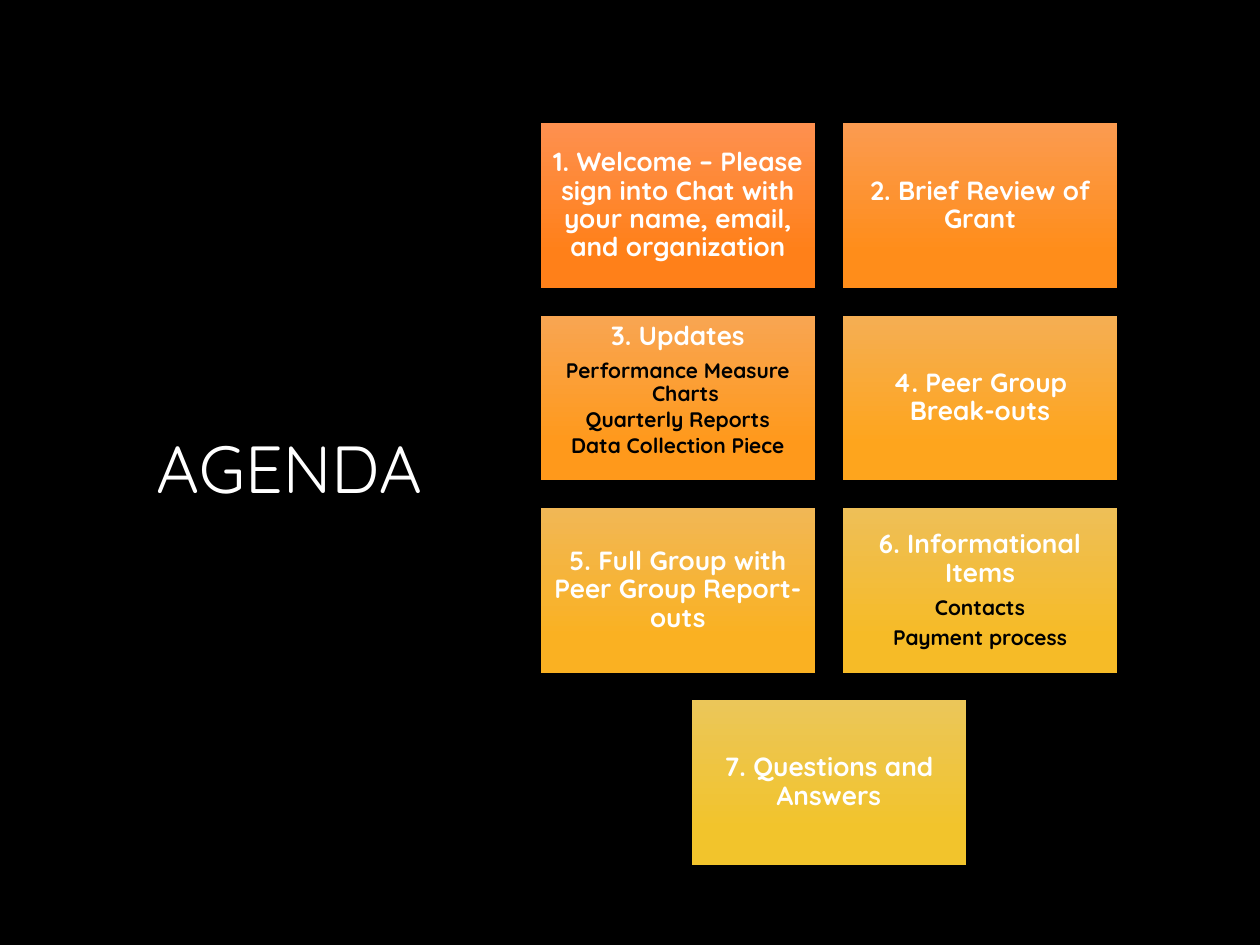
"""Build the agenda slide: a title beside a grid of numbered cards."""
from dataclasses import dataclass

from pptx import Presentation
from pptx import util as u
from pptx.dml.color import RGBColor
from pptx.enum import shapes, text


@dataclass(frozen=True)
class Theme:
    """Colours, font and type sizes."""
    font: str = "Quicksand"
    back: str = "000000"
    light: str = "FFFFFF"
    dark: str = "000000"
    title: int = 38
    head: int = 15
    sub: int = 12


CARDS = [
    ("1. Welcome – Please sign into Chat with your name, email, and organization",
     (), "FE904F", "FF8019"),
    ("2. Brief Review of Grant", (), "FB9B50", "FF8D1A"),
    ("3. Updates",
     ("Performance Measure Charts", "Quarterly Reports", "Data Collection Piece"),
     "F8A552", "FF991B"),
    ("4. Peer Group Break-outs", (), "F5AE53", "FEA51D"),
    ("5. Full Group with Peer Group Report-outs", (), "F1B755", "FAB122"),
    ("6. Informational Items", ("Contacts", "Payment process"), "EEBF57", "F6BB27"),
    ("7. Questions and Answers", (), "EBC659", "F2C42C"),
]
LISTED = 2
COLS = 2
LEFT, TOP, WIDTH = 4.29, 0.98, 2.18
HEIGHT, GAP = 0.6 * WIDTH, 0.1 * WIDTH


def write(para, words, *, font, size, color, bold=False,
          align=text.PP_ALIGN.CENTER, after=0, hang=0):
    """Fill a paragraph with formatted text."""
    if hang:
        props = para._p.get_or_add_pPr()
        props.set("marL", str(u.Inches(hang)))
        props.set("indent", str(-u.Inches(hang)))
    para.alignment = align
    para.line_spacing = 0.9
    para.space_before = u.Pt(0)
    para.space_after = u.Pt(after)
    run = para.add_run()
    run.text = words
    run.font.name = font
    run.font.size = u.Pt(size)
    run.font.bold = bold
    run.font.color.rgb = RGBColor.from_string(color)


class Page:
    """Hold the theme and the current slide."""

    def __init__(self, slide, theme):
        self.slide, self.theme = slide, theme
        fill = slide.background.fill
        fill.solid()
        fill.fore_color.rgb = RGBColor.from_string(theme.back)

    def title(self, words, left, top, width, height):
        """Place the title text."""
        box, look = self.slide.shapes.title, self.theme
        box.left, box.top = u.Inches(left), u.Inches(top)
        box.width, box.height = u.Inches(width), u.Inches(height)
        frame = box.text_frame
        frame.word_wrap = True
        frame.vertical_anchor = text.MSO_ANCHOR.MIDDLE
        write(frame.paragraphs[0], words, font=look.font, size=look.title,
              color=look.light, align=text.PP_ALIGN.RIGHT)

    def card(self, head, subs, first, last, left, top, listed=False):
        """Draw a gradient card with a heading and optional lines."""
        look = self.theme
        box = self.slide.shapes.add_shape(
            shapes.MSO_SHAPE.RECTANGLE, u.Inches(left), u.Inches(top),
            u.Inches(WIDTH), u.Inches(HEIGHT))
        box.shadow.inherit = False
        box.line.fill.background()
        box.fill.gradient()
        box.fill.gradient_angle = 270
        for stop, color, place in zip(box.fill.gradient_stops, (first, last), (0, 0.78)):
            stop.color.rgb = RGBColor.from_string(color)
            stop.position = place
        frame = box.text_frame
        frame.word_wrap = True
        frame.margin_left = frame.margin_right = u.Inches(0.06)
        frame.margin_top = frame.margin_bottom = u.Inches(0.06)
        anchor = text.MSO_ANCHOR
        frame.vertical_anchor = anchor.TOP if listed else anchor.MIDDLE
        write(frame.paragraphs[0], head, font=look.font, size=look.head,
              color=look.light, bold=True, after=0.35 * look.head)
        share, hang = (0.15, 0.12) if listed else (0.35, 0)
        for line in subs:
            write(frame.add_paragraph(), line, font=look.font, size=look.sub,
                  color=look.dark, bold=True, after=share * look.sub, hang=hang)


def main():
    """Build and save the deck."""
    deck = Presentation()
    deck.slide_width, deck.slide_height = u.Inches(10), u.Inches(7.5)
    page = Page(deck.slides.add_slide(deck.slide_layouts[5]), Theme())
    page.title("AGENDA", 0.54, 1.51, 2.91, 4.48)
    for i, card in enumerate(CARDS):
        row, col = divmod(i, COLS)
        count = min(COLS, len(CARDS) - row * COLS)
        shift = col + (COLS - count) / 2
        page.card(*card, LEFT + shift * (WIDTH + GAP), TOP + row * (HEIGHT + GAP),
                  listed=i == LISTED)
    deck.save("out.pptx")


if __name__ == "__main__":
    main()
